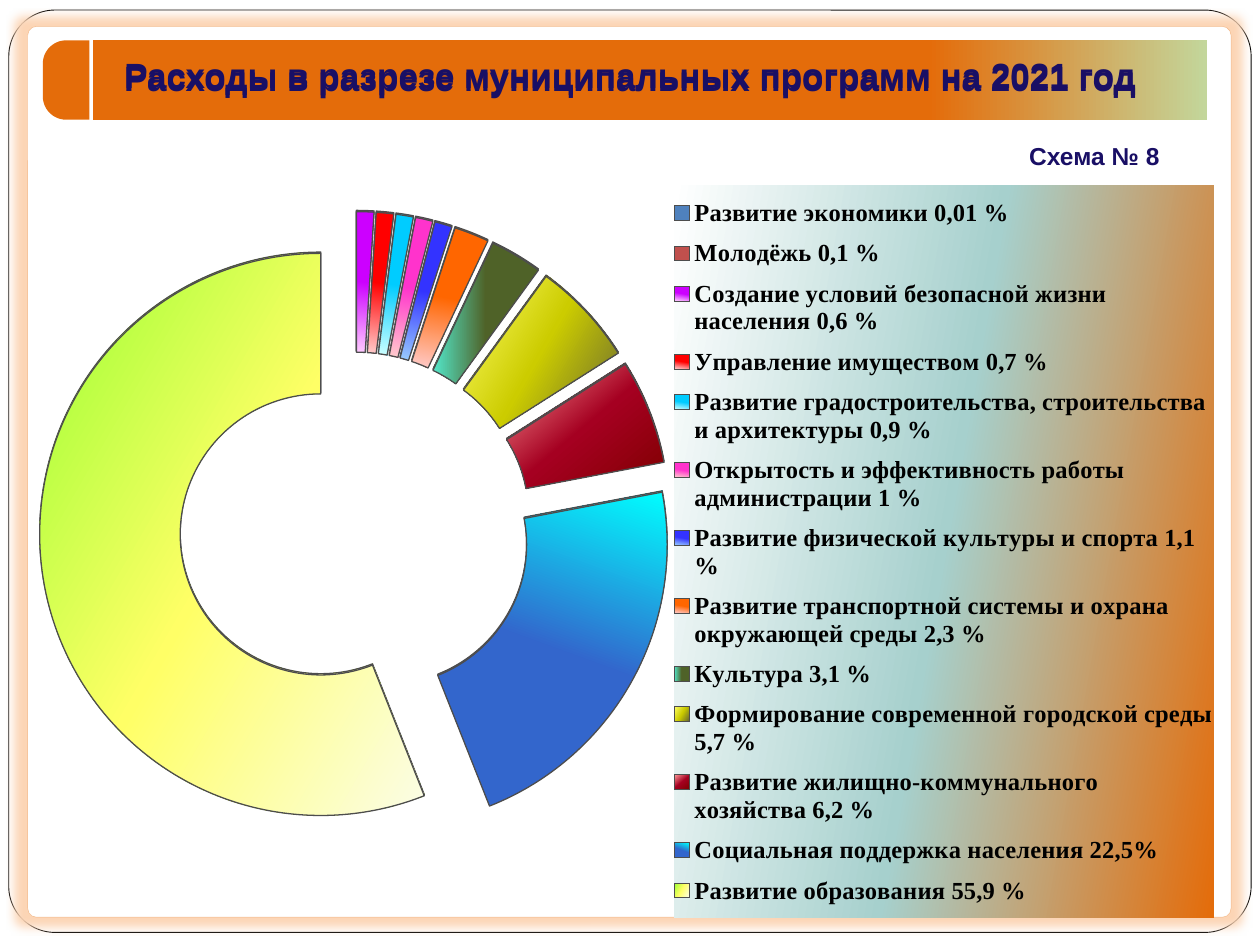
from dataclasses import dataclass

from lxml import etree
from pptx import Presentation
from pptx.chart.data import CategoryChartData
from pptx.dml.color import RGBColor
from pptx.enum.chart import XL_CHART_TYPE, XL_LEGEND_POSITION
from pptx.enum.shapes import MSO_SHAPE
from pptx.enum.text import MSO_ANCHOR, PP_ALIGN
from pptx.oxml import parse_xml
from pptx.oxml.ns import nsdecls, qn
from pptx.util import Inches, Pt

DOUGHNUT = XL_CHART_TYPE.DOUGHNUT_EXPLODED
LEGEND_RIGHT = XL_LEGEND_POSITION.RIGHT
ROUNDED = MSO_SHAPE.ROUNDED_RECTANGLE
TAB = MSO_SHAPE.ROUND_2_SAME_RECTANGLE
RECTANGLE = MSO_SHAPE.RECTANGLE
TOP = MSO_ANCHOR.TOP
CENTER, LEFT = PP_ALIGN.CENTER, PP_ALIGN.LEFT

COLUMNS, ROWS = 1000, 750
CELL = Inches(0.01)


@dataclass(frozen=True)
class Theme:
    heading_font: str = "Arial"
    chart_font: str = "Times New Roman"
    title_size: int = 20
    caption_size: int = 14
    legend_size: int = 14
    chart_size: int = 18
    heading: str = "190F65"
    text: str = "000000"
    paper: str = "FFFFFF"
    accent: str = "E46C0A"
    glow: str = "FCD5B5"
    slice_line: str = "4D4D4D"
    bar_stops: tuple = ((0, "E46C0A"), (75, "E46C0A"), (100, "C3D69B"))
    legend_stops: tuple = ((0, "FFFFFF"), (50, "A6D0CD"), (100, "E46C0A"))


THEME = Theme()

TITLE = "Расходы в разрезе муниципальных программ на 2021 год"
CAPTION = "Схема № 8"


def fade(start, end):
    return ((50, start), (100, end)), 100


PROGRAMS = [
    ("Развитие экономики 0,01 %", 0, "4F81BD"),
    ("Молодёжь 0,1 %", 0, "C0504D"),
    ("Создание условий безопасной жизни населения 0,6 %", 1, fade("CC00FF", "FFCCFF")),
    ("Управление имуществом 0,7 %", 1, fade("FF0000", "FFCCCC")),
    ("Развитие градостроительства, строительства и архитектуры 0,9 %", 1,
     fade("00CCFF", "CCFFFF")),
    ("Открытость и эффективность работы администрации 1 %", 1, fade("FF33CC", "FFCCCC")),
    ("Развитие физической культуры и спорта 1,1 %", 1, fade("3333FF", "99CCFF")),
    ("Развитие транспортной системы и охрана окружающей среды 2,3 %", 2,
     fade("FF6600", "FFCCCC")),
    ("Культура 3,1 %", 3, (((50, "4F6228"), (100, "52E7CA"), (100, "C5F7ED")), 180)),
    ("Формирование современной городской среды 5,7 %", 6,
     (((0, "666633"), (50, "CCCC00"), (100, "FFFF66")), 210)),
    ("Развитие жилищно-коммунального хозяйства 6,2 %", 6,
     (((0, "800000"), (50, "A50021"), (100, "FF9999")), 230)),
    ("Социальная поддержка населения 22,5%", 22,
     (((50, "3366CC"), (100, "00FFFF"), (100, "CCFFFF")), 290)),
    ("Развитие образования 55,9 %", 56,
     (((0, "99FF33"), (50, "FFFF66"), (100, "FBFDE6")), 30)),
]


def color(value):
    return RGBColor.from_string(value)


def place(box):
    return [CELL * length for length in box]


def set_gradient(properties, stops, angle):
    marks = "".join(f'<a:gs pos="{position * 1000}"><a:srgbClr val="{value}"/></a:gs>'
                    for position, value in stops)
    gradient = parse_xml(
        f'<a:gradFill {nsdecls("a")} rotWithShape="1"><a:gsLst>{marks}</a:gsLst>'
        f'<a:lin ang="{angle * 60000}" scaled="0"/></a:gradFill>')
    properties.find(qn("a:ln")).addprevious(gradient)


def manual_layout(part, box, target=""):
    x, y, width, height = part
    return parse_xml(
        f'<c:layout {nsdecls("c")}><c:manualLayout>{target}'
        '<c:xMode val="edge"/><c:yMode val="edge"/>'
        f'<c:x val="{x / box[2]}"/><c:y val="{y / box[3]}"/>'
        f'<c:w val="{width / box[2]}"/><c:h val="{height / box[3]}"/>'
        '</c:manualLayout></c:layout>')


def add_panel(slide, kind, box, fill=None, line=None, line_width=0.5):
    shape = slide.shapes.add_shape(kind, *place(box))
    shape.shadow.inherit = False
    if fill:
        shape.fill.solid()
        shape.fill.fore_color.rgb = color(fill)
    if line:
        shape.line.color.rgb = color(line)
        shape.line.width = Pt(line_width)
    else:
        shape.line.fill.background()
    return shape


def draw_frame(slide, box):
    left, top, width, height = box
    outer = add_panel(slide, ROUNDED, box, THEME.paper, THEME.text)
    outer.adjustments[0] = 0.05
    inner = add_panel(slide, ROUNDED, (left + 15, top + 13, width - 31, height - 25),
                      THEME.paper, THEME.accent, 0.25)
    inner.adjustments[0] = 0.01
    line_color = inner.element.spPr.find(".//" + qn("a:ln")).find(".//" + qn("a:srgbClr"))
    etree.SubElement(line_color, qn("a:alpha")).set("val", "39000")
    inner.element.spPr.find(qn("a:effectLst")).append(parse_xml(
        f'<a:outerShdw {nsdecls("a")} blurRad="{Pt(5)}" dist="0" sx="102000" sy="102000" '
        f'algn="ctr" rotWithShape="0"><a:srgbClr val="{THEME.glow}"/></a:outerShdw>'))


def draw_title_bar(slide, box):
    left, top, width, height = box
    tab_width, gap = 37, 3
    tab = add_panel(slide, TAB, (left + (tab_width - height) / 2, top + (height - tab_width) / 2,
                                 height, tab_width), THEME.accent)
    tab.rotation = 270
    tab.adjustments[0] = 0.5
    offset = tab_width + gap
    bar = add_panel(slide, RECTANGLE, (left + offset, top, width - offset, height))
    set_gradient(bar.element.spPr, THEME.bar_stops, 0)


def write_heading(shape, box, text, size, alignment, spacing=1.0):
    shape.left, shape.top, shape.width, shape.height = place(box)
    frame = shape.text_frame
    frame.word_wrap = True
    frame.vertical_anchor = TOP
    frame.text = text
    paragraph = frame.paragraphs[0]
    paragraph.alignment = alignment
    paragraph.line_spacing = spacing
    paragraph.space_before = Pt(0)
    paragraph.font.name = THEME.heading_font
    paragraph.font.size = Pt(size)
    paragraph.font.bold = True
    paragraph.font.color.rgb = color(THEME.heading)


def style_legend(chart, box):
    chart.has_legend = True
    legend = chart.legend
    legend.position = LEGEND_RIGHT
    legend.include_in_layout = False
    legend.font.size = Pt(THEME.legend_size)
    legend.font.bold = True
    legend.font.name = THEME.chart_font
    legend.font.color.rgb = color(THEME.text)
    overlay = chart.element.xpath(".//c:legend/c:overlay")[0]
    for layout in chart.element.xpath(".//c:legend/c:layout"):
        layout.getparent().remove(layout)
    overlay.addprevious(manual_layout((504, 0, 428, box[3]), box))
    properties = parse_xml(f'<c:spPr {nsdecls("c", "a")}><a:ln><a:noFill/></a:ln></c:spPr>')
    set_gradient(properties, THEME.legend_stops, 10)
    overlay.addnext(properties)


def draw_doughnut(slide, box):
    data = CategoryChartData()
    data.categories = [name for name, _, _ in PROGRAMS]
    data.add_series("Series 1", [share for _, share, _ in PROGRAMS])
    chart = slide.shapes.add_chart(DOUGHNUT, *place(box), data).chart
    chart.has_title = False
    chart.font.name = THEME.chart_font
    chart.font.size = Pt(THEME.chart_size)
    chart.font.color.rgb = color(THEME.text)
    plot = chart.plots[0]
    plot.vary_by_categories = True
    for index, (_, _, fill) in enumerate(PROGRAMS):
        point = plot.series[0].points[index].format
        point.line.color.rgb = color(THEME.slice_line)
        point.line.width = Pt(0.75)
        if isinstance(fill, str):
            point.fill.solid()
            point.fill.fore_color.rgb = color(fill)
        else:
            set_gradient(chart.element.xpath(f".//c:dPt[c:idx/@val={index}]/c:spPr")[0], *fill)
    chart.element.xpath(".//c:holeSize")[0].set("val", "30")
    area = chart.element.xpath(".//c:plotArea")[0]
    for layout in area.findall(qn("c:layout")):
        area.remove(layout)
    area.insert(0, manual_layout((0, 20, 502, 502), box, '<c:layoutTarget val="inner"/>'))
    style_legend(chart, box)


def main():
    presentation = Presentation()
    presentation.slide_width, presentation.slide_height = CELL * COLUMNS, CELL * ROWS
    slide = presentation.slides.add_slide(presentation.slide_layouts[5])
    draw_frame(slide, (7, 8, 986, 732))
    draw_title_bar(slide, (34, 32, 924, 63))
    title = slide.shapes.title
    for step, make_heading in enumerate((lambda: slide.shapes.add_textbox(0, 0, 0, 0),
                                         lambda: title)):
        draw_doughnut(slide, (31, 147 + step, 945, 580))
        heading = make_heading()
        write_heading(heading, (28, 44 + 2 * step, 945, 37), TITLE, THEME.title_size, CENTER, 0.8)
        heading.element.getparent().append(heading.element)
    caption = slide.shapes.add_textbox(0, 0, 0, 0)
    write_heading(caption, (807, 107, 150, 34), CAPTION, THEME.caption_size, LEFT)
    presentation.save("out.pptx")


if __name__ == "__main__":
    main()
